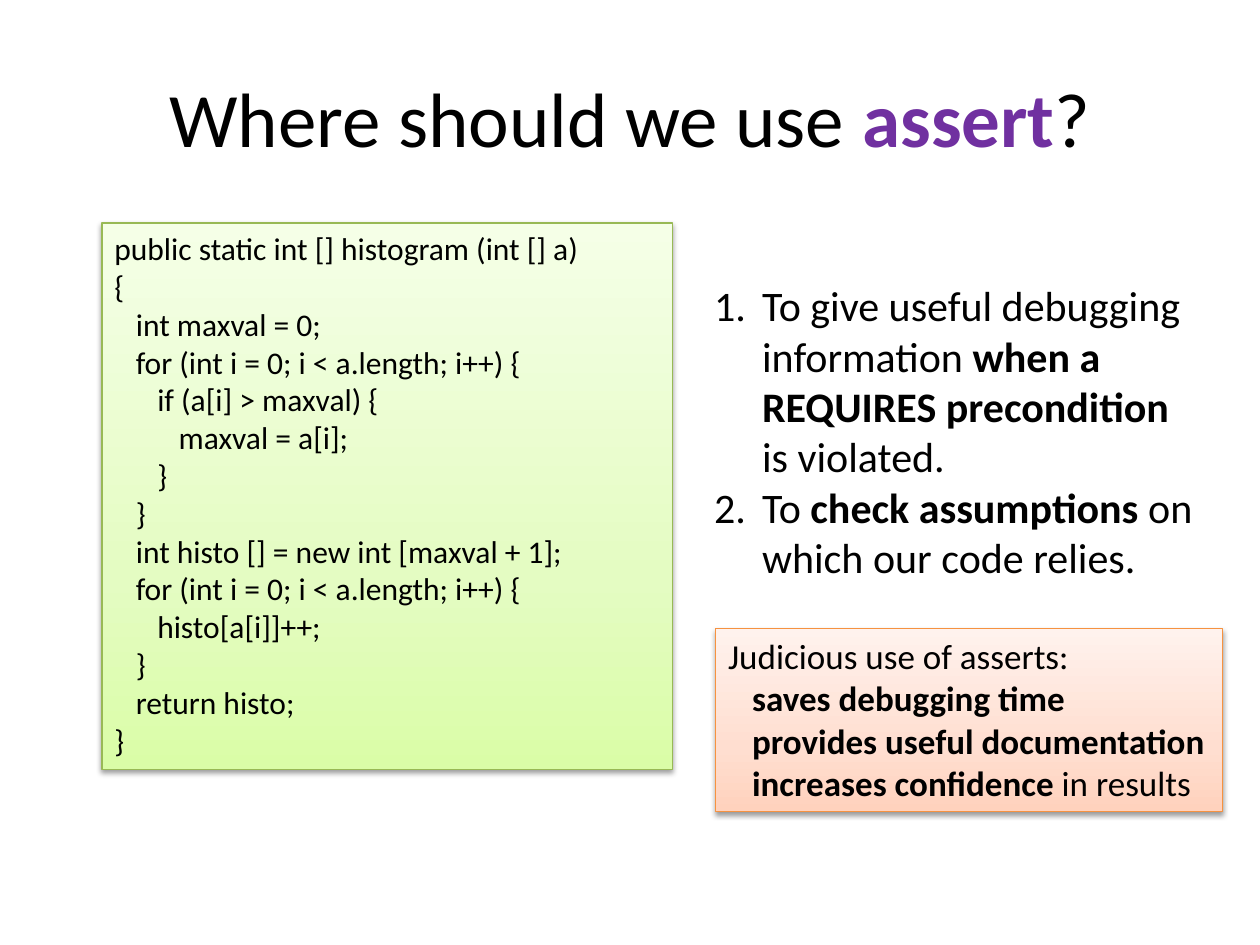
from copy import deepcopy

from lxml import etree
from pptx import Presentation
from pptx.dml.color import RGBColor
from pptx.enum import shapes, text
from pptx.oxml.ns import qn
from pptx.util import Inches, Pt

BLACK = RGBColor(0x00, 0x00, 0x00)
PURPLE = RGBColor(0x70, 0x30, 0xA0)
GREEN = RGBColor(0x98, 0xB9, 0x55)
ORANGE = RGBColor(0xF6, 0x92, 0x40)
LIMES = [RGBColor.from_string(c) for c in ("DAFDA7", "E4FCC2", "F5FFE7")]
PEACHES = [RGBColor.from_string(c) for c in ("FFD2BD", "FFDED0", "FFF2ED")]
STOPS = (0, 35, 100)

# Each code line: indent level, text
CODE = [
    (0, "public static int [] histogram (int [] a)"),
    (0, "{"),
    (1, "int maxval = 0;"),
    (1, "for (int i = 0; i < a.length; i++) {"),
    (2, "if (a[i] > maxval) {"),
    (3, "maxval = a[i];"),
    (2, "}"),
    (1, "}"),
    (1, "int histo [] = new int [maxval + 1];"),
    (1, "for (int i = 0; i < a.length; i++) {"),
    (2, "histo[a[i]]++;"),
    (1, "}"),
    (1, "return histo;"),
    (0, "}"),
]
# Each run: text, bold
USES = [
    [("To give useful debugging information ", False),
     ("when a REQUIRES precondition", True), (" is violated.", False)],
    [("To ", False), ("check assumptions", True),
     (" on which our code relies.", False)],
]
GAINS = [
    (0, [("Judicious use of asserts:", False)]),
    (1, [("saves debugging time", True)]),
    (1, [("provides useful documentation", True)]),
    (1, [("increases confidence ", True), ("in results", False)]),
]


def add_run(para, words, size, bold=False, color=BLACK):
    run = para.add_run()
    run.text = words
    font = run.font
    font.name, font.size, font.bold = "Calibri", Pt(size), bold
    font.color.rgb = color


def add_para(frame, first, runs, size, left=0, hang=0):
    """Add a paragraph of (text, bold) runs, indented by inches."""
    para = frame.paragraphs[0] if first else frame.add_paragraph()
    para.alignment = text.PP_ALIGN.LEFT
    props = para._p.get_or_add_pPr()
    props.set("marL", str(Inches(left)))
    props.set("indent", str(Inches(-hang)))
    for words, bold in runs:
        add_run(para, words, size, bold)
    return props


def add_shadow(shape):
    shape.shadow.inherit = False
    effects = shape._element.spPr.find(qn("a:effectLst"))
    outer = etree.SubElement(
        effects, qn("a:outerShdw"), blurRad=str(Pt(3.1)), dist=str(Pt(1.6)),
        dir="5400000", rotWithShape="0")
    color = etree.SubElement(outer, qn("a:srgbClr"), val=str(BLACK))
    etree.SubElement(color, qn("a:alpha"), val="38000")


def add_panel(slide, box, colors, edge, lines, size, step, wrap=True):
    """Add a shaded box of (level, runs) lines, each level step inches in."""
    panel = slide.shapes.add_shape(
        shapes.MSO_SHAPE.RECTANGLE, *map(Inches, box))
    fill = panel.fill
    fill.gradient()
    fill.gradient_angle = 90
    stops = panel._element.spPr.find(".//" + qn("a:gsLst"))
    stops.insert(1, deepcopy(stops[0]))
    for stop, place, color in zip(fill.gradient_stops, STOPS, colors):
        stop.position = place / 100
        stop.color.rgb = color
    panel.line.color.rgb = edge
    panel.line.width = Pt(0.75)
    add_shadow(panel)
    frame = panel.text_frame
    frame.word_wrap = wrap
    frame.vertical_anchor = text.MSO_ANCHOR.TOP
    frame.auto_size = text.MSO_AUTO_SIZE.SHAPE_TO_FIT_TEXT
    for i, (level, runs) in enumerate(lines):
        add_para(frame, i == 0, runs, size, left=level * step)


def add_title(slide, box):
    title = slide.shapes.title
    title.left, title.top, title.width, title.height = map(Inches, box)
    frame = title.text_frame
    frame.vertical_anchor = text.MSO_ANCHOR.MIDDLE
    para = frame.paragraphs[0]
    para.alignment = text.PP_ALIGN.CENTER
    add_run(para, "Where should we use ", 44)
    add_run(para, "assert", 44, True, PURPLE)
    add_run(para, "?", 44)


def add_uses(slide, box):
    frame = slide.shapes.add_textbox(*map(Inches, box)).text_frame
    frame.word_wrap = True
    frame.auto_size = text.MSO_AUTO_SIZE.SHAPE_TO_FIT_TEXT
    for i, runs in enumerate(USES):
        props = add_para(frame, i == 0, runs, 24, left=0.38, hang=0.38)
        etree.SubElement(props, qn("a:buFont"), typeface="+mj-lt")
        etree.SubElement(props, qn("a:buAutoNum"), type="arabicPeriod")


def main():
    deck = Presentation()
    deck.slide_width, deck.slide_height = Inches(10), Inches(7.5)
    slide = deck.slides.add_slide(deck.slide_layouts[5])
    add_title(slide, (0.5, 0.3, 9, 1.25))
    code = [(level, [(words, False)]) for level, words in CODE]
    add_panel(slide, (0.81, 1.77, 4.53, 4.34), LIMES, GREEN, code, 18, 0.17)
    add_uses(slide, (5.57, 2.17, 4.07, 2.52))
    add_panel(slide, (5.68, 4.99, 4.02, 1.45), PEACHES, ORANGE, GAINS, 20,
              0.19, wrap=False)
    deck.save("out.pptx")


if __name__ == "__main__":
    main()
